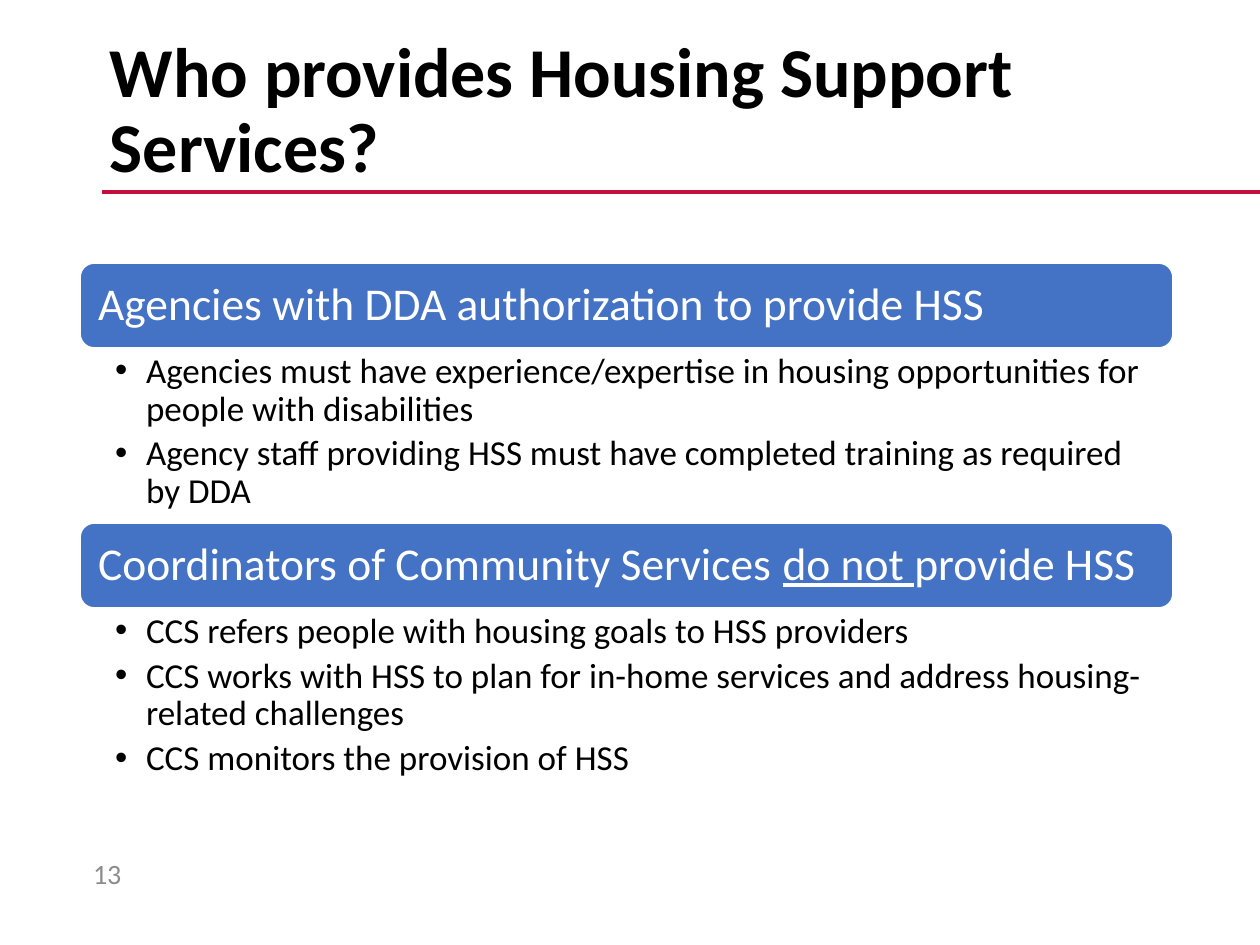
from lxml.etree import SubElement
from pptx import Presentation
from pptx.dml.color import RGBColor
from pptx.enum.shapes import MSO_CONNECTOR as Connector, MSO_SHAPE as Shape
from pptx.enum.text import MSO_ANCHOR as Anchor, PP_ALIGN as Align
from pptx.oxml.ns import qn
from pptx.util import Pt

EMU_PER_PX = 914400 / 126
BLACK, WHITE, BLUE, RED, GREY = "000000", "FFFFFF", "4472C4", "C40E3E", "8C8C8C"

SECTIONS = [
    ([("Agencies with DDA authorization to provide HSS", False)],
     ["Agencies must have experience/expertise in housing opportunities for people with disabilities",
      "Agency staff providing HSS must have completed training as required by DDA"]),
    ([("Coordinators of Community Services ", False), ("do not ", True), ("provide HSS", False)],
     ["CCS refers people with housing goals to HSS providers",
      "CCS works with HSS to plan for in-home services and address housing-related challenges",
      "CCS monitors the provision of HSS"]),
]


def px(length):
    return round(length * EMU_PER_PX)


def color(hex_code):
    return RGBColor.from_string(hex_code)


def set_all(target, values):
    for name, value in values.items():
        setattr(target, name, value)


def set_frame(frame, margins, anchor=Anchor.TOP):
    left, top, right, bottom = map(px, margins)
    set_all(frame, dict(word_wrap=True, vertical_anchor=anchor, margin_left=left,
                        margin_top=top, margin_right=right, margin_bottom=bottom))


def write(paragraph, runs, size, hex_code, bold=False, **spacing):
    set_all(paragraph, dict(alignment=Align.LEFT, **spacing))
    for text, underline in runs:
        run = paragraph.add_run()
        run.text = text
        set_all(run.font, dict(name="Calibri", size=Pt(size), bold=bold, underline=underline))
        run.font.color.rgb = color(hex_code)


def add_text(slide, box, margins, anchor=Anchor.TOP):
    frame = slide.shapes.add_textbox(*map(px, box)).text_frame
    set_frame(frame, margins, anchor)
    return frame


def add_bullet(paragraph, indent):
    props = paragraph._p.get_or_add_pPr()
    props.set("marL", str(px(indent)))
    props.set("indent", str(-px(indent)))
    SubElement(props, qn("a:buFont")).set("typeface", "Arial")
    SubElement(props, qn("a:buChar")).set("char", "•")


def add_heading(slide, box):
    left, top, width, height = box
    # Rule running to the right edge of the slide
    rule_y = px(top + height - 12)
    rule = slide.shapes.add_connector(Connector.STRAIGHT, px(left + 5), rule_y, px(1260), rule_y)
    rule.line.color.rgb = color(RED)
    rule.line.width = Pt(2.25)
    SubElement(rule._element.spPr, qn("a:effectLst"))
    # Title
    title = add_text(slide, box, (13, 6, 13, 6), Anchor.MIDDLE)
    write(title.paragraphs[0], [("Who provides Housing Support Services?", False)],
          40, BLACK, bold=True, line_spacing=0.9)


def add_section(slide, box, banner_runs, points):
    left, top, width, height = box
    banner_height = 85
    # Banner
    banner = slide.shapes.add_shape(
        Shape.ROUNDED_RECTANGLE, *map(px, (left, top, width, banner_height)))
    banner.shadow.inherit = False
    banner.fill.solid()
    banner.fill.fore_color.rgb = color(BLUE)
    banner.line.color.rgb = color(WHITE)
    banner.line.width = Pt(1)
    set_frame(banner.text_frame, (14, 10, 14, 10), Anchor.MIDDLE)
    write(banner.text_frame.paragraphs[0], banner_runs, 26, WHITE, line_spacing=0.9)
    # Points below the banner
    body = add_text(slide, (left, top + banner_height, width, height - banner_height),
                    (35, 5, 25, 5))
    for index, point in enumerate(points):
        paragraph = body.add_paragraph() if index else body.paragraphs[0]
        add_bullet(paragraph, 31)
        write(paragraph, [(point, False)], 20, BLACK, line_spacing=0.9, space_after=Pt(4))


def add_page_number(slide, box, number):
    frame = add_text(slide, box, (13, 6, 13, 6), Anchor.MIDDLE)
    write(frame.paragraphs[0], [(number, False)], 16, GREY)


def main():
    prs = Presentation()
    set_all(prs, dict(slide_width=px(1260), slide_height=px(945)))
    slide = prs.slides.add_slide(prs.slide_layouts[6])
    add_heading(slide, (97, 21, 1086, 183))
    for index, (banner_runs, points) in enumerate(SECTIONS):
        add_section(slide, (80, 263 + 260 * index, 1093, 260), banner_runs, points)
    add_page_number(slide, (80, 848, 69, 50), "13")
    prs.save("out.pptx")


if __name__ == "__main__":
    main()
